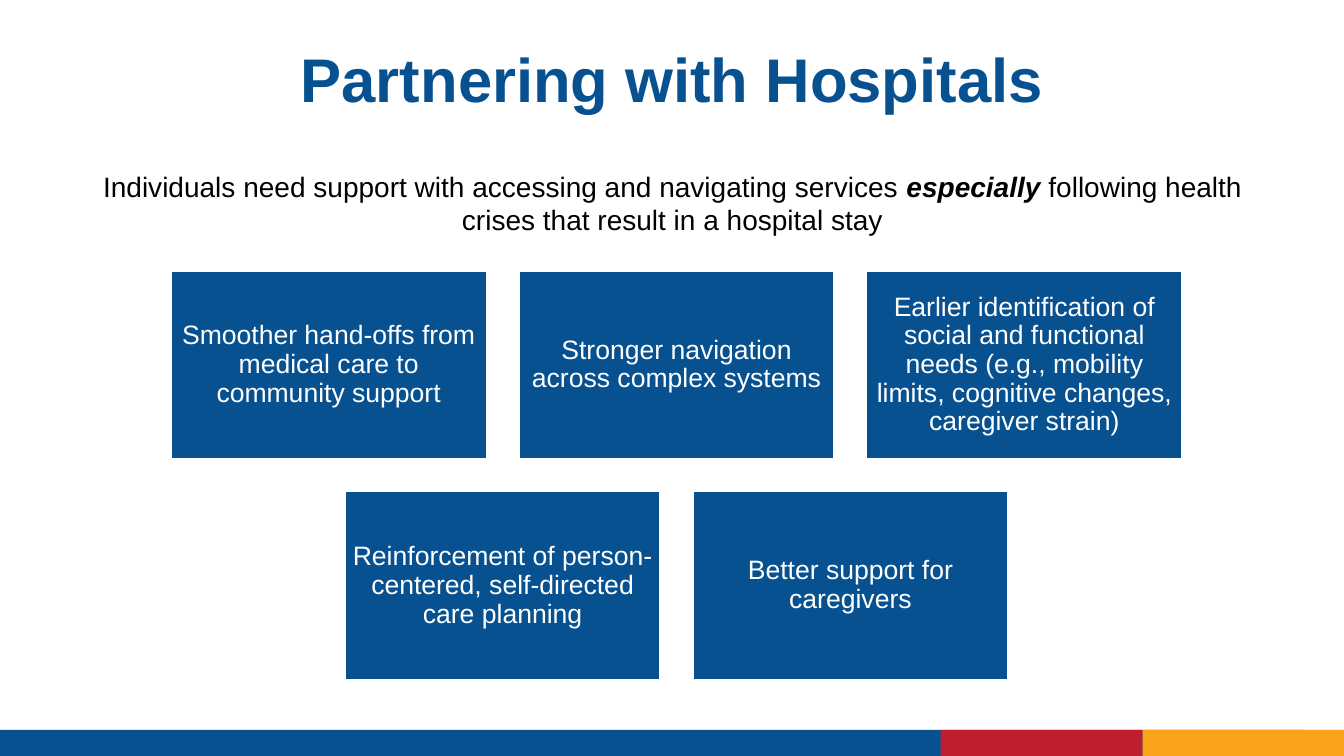
from pptx import Presentation
from pptx.dml.color import RGBColor
from pptx.enum import shapes, text
from pptx.util import Inches, Pt

BLUE = RGBColor(0x07, 0x51, 0x90)
RED = RGBColor(0xBE, 0x1E, 0x2D)
ORANGE = RGBColor(0xF9, 0xA2, 0x1A)
WHITE = RGBColor(0xFF, 0xFF, 0xFF)
BLACK = RGBColor(0, 0, 0)

prs = Presentation()
prs.slide_width, prs.slide_height = Inches(13.33), Inches(7.5)
slide = prs.slides.add_slide(prs.slide_layouts[6])


def add_block(left, top, width, height, color):
    block = slide.shapes.add_shape(shapes.MSO_SHAPE.RECTANGLE, Inches(left),
                                   Inches(top), Inches(width), Inches(height))
    block.shadow.inherit = False
    block.fill.solid()
    block.fill.fore_color.rgb = color
    block.line.fill.background()
    return block


def add_run(paragraph, words, size, color, bold=False, italic=False):
    run = paragraph.add_run()
    run.text = words
    run.font.name = "Arial"
    run.font.size = Pt(size)
    run.font.color.rgb = color
    run.font.bold = bold
    run.font.italic = italic


# Footer band
for left, width, color in [(0, 12.93, BLUE), (11.33, 2, ORANGE), (9.33, 2, RED)]:
    add_block(left, 7.24, width, 0.27, color)

# Title
title = slide.shapes.add_textbox(Inches(0.92), Inches(0.38), Inches(11.5), Inches(0.87))
title.text_frame.word_wrap = True
title.text_frame.vertical_anchor = text.MSO_ANCHOR.MIDDLE
heading = title.text_frame.paragraphs[0]
heading.alignment = text.PP_ALIGN.CENTER
heading.line_spacing = 0.9
add_run(heading, "Partnering with Hospitals", 44, BLUE, bold=True)

# Introduction
intro = slide.shapes.add_textbox(Inches(0.72), Inches(1.63), Inches(11.9), Inches(0.77))
intro.text_frame.word_wrap = True
need = intro.text_frame.paragraphs[0]
need.alignment = text.PP_ALIGN.CENTER
need.space_after = Pt(6)
add_run(need, "Individuals need support with accessing and navigating services ", 20, BLACK)
add_run(need, "especially", 20, BLACK, bold=True, italic=True)
add_run(need, " following health crises that result in a hospital stay", 20, BLACK)

# Benefit cards: each row is centred on the same axis
CARD_WIDTH, CARD_HEIGHT = 3.14, 1.88
STEP_X, STEP_Y = 3.45, 2.19
CENTER_X, FIRST_TOP = 6.71, 2.68
benefit_rows = [
    ["Smoother hand‑offs from medical care to community support",
     "Stronger navigation across complex systems",
     "Earlier identification of social and functional needs "
     "(e.g., mobility limits, cognitive changes, caregiver strain)"],
    ["Reinforcement of person-centered, self-directed care planning",
     "Better support for caregivers"],
]
for row, benefits in enumerate(benefit_rows):
    row_left = CENTER_X - (STEP_X * (len(benefits) - 1) + CARD_WIDTH) / 2
    for column, benefit in enumerate(benefits):
        card = add_block(row_left + column * STEP_X, FIRST_TOP + row * STEP_Y,
                         CARD_WIDTH, CARD_HEIGHT, BLUE)
        card.line.color.rgb = WHITE
        card.line.width = Pt(2)
        frame = card.text_frame
        frame.word_wrap = True
        frame.vertical_anchor = text.MSO_ANCHOR.MIDDLE
        frame.margin_left = frame.margin_right = Inches(0.08)
        frame.margin_top = frame.margin_bottom = Inches(0.08)
        label = frame.paragraphs[0]
        label.alignment = text.PP_ALIGN.CENTER
        label.line_spacing = 0.9
        add_run(label, benefit, 19, WHITE)

prs.save("out.pptx")
